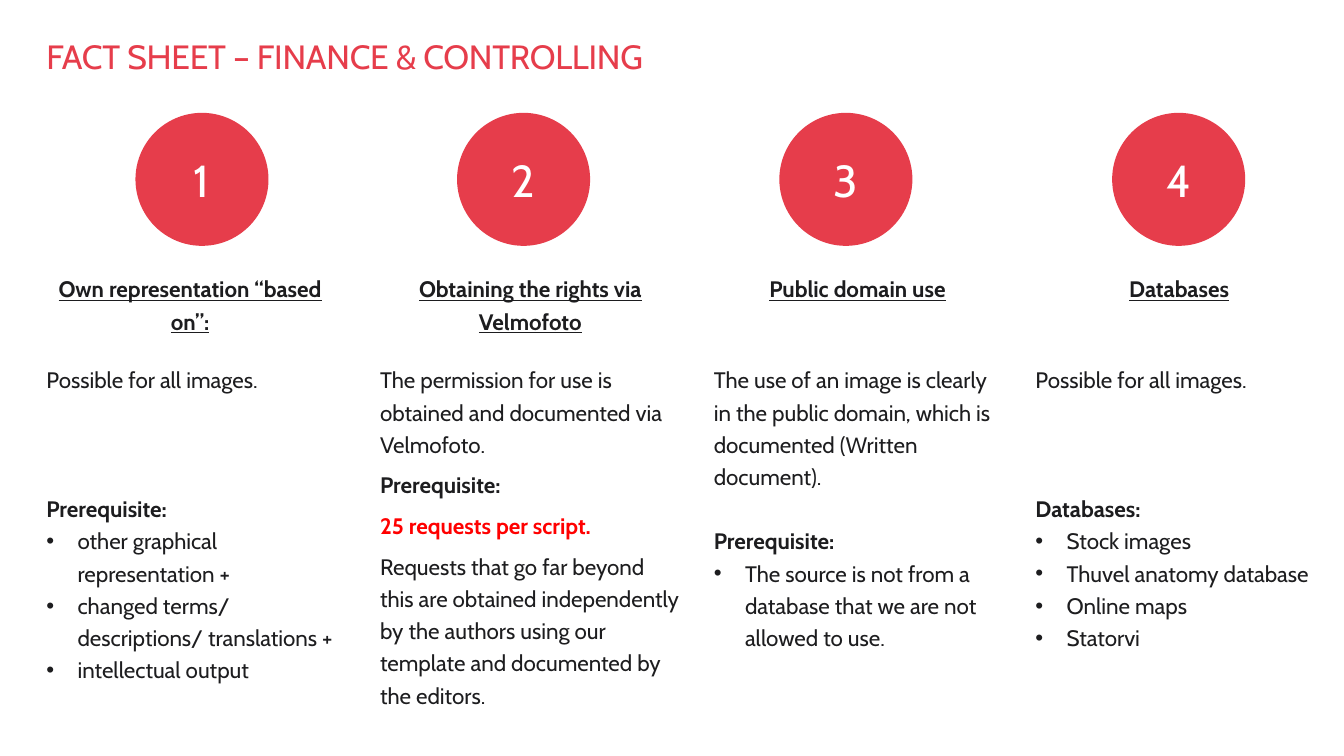
from dataclasses import dataclass

from lxml.etree import SubElement
from pptx import Presentation
from pptx.dml.color import RGBColor
from pptx.enum.shapes import MSO_SHAPE
from pptx.enum.text import MSO_ANCHOR, PP_ALIGN
from pptx.oxml.ns import qn
from pptx.util import Inches, Pt

CORAL = RGBColor(0xE6, 0x3D, 0x4B)
INK = RGBColor(0x1D, 0x1D, 0x1F)
ALERT = RGBColor(0xFF, 0x00, 0x00)
WHITE = RGBColor(0xFF, 0xFF, 0xFF)
FONT = "Cabin"
SLIDE_WIDTH, SLIDE_HEIGHT = Inches(13.33), Inches(7.5)
BULLET_INDENT = Inches(0.31)
BADGE_TOP, BADGE_SHARE = 14.93, 9.9
COLUMN_TOP = 35.73


@dataclass
class Line:
    text: str
    bold: bool = False
    bullet: bool = False
    before: float = 0
    after: float = 0
    color: RGBColor = INK


@dataclass
class Option:
    left: float
    width: float
    height: float
    badge_left: float
    heading: str
    lines: list


OPTIONS = [
    Option(3.45, 21.38, 64.27, 10.08, "Own representation “based on”:", [
        Line("Possible for all images.", before=19),
        Line("Prerequisite:", bold=True, before=69),
        Line("other graphical representation +", bullet=True),
        Line("changed terms/ descriptions/ translations +", bullet=True),
        Line("intellectual output", bullet=True),
    ]),
    Option(28.28, 22.36, 64.27, 34.01, "Obtaining the rights via Velmofoto", [
        Line("The permission for use is obtained and documented via Velmofoto.", before=19),
        Line("Prerequisite:", bold=True, before=6),
        Line("25 requests per script.", bold=True, before=6, after=6, color=ALERT),
        Line("Requests that go far beyond this are obtained independently by the authors "
             "using our template and documented by the editors."),
    ]),
    Option(53.11, 21.38, 55.73, 57.99, "Public domain use", [
        Line("The use of an image is clearly in the public domain, which is documented "
             "(Written document).", before=42),
        Line("Prerequisite:", bold=True, before=23),
        Line("The source is not from a database that we are not allowed to use.", bullet=True),
    ]),
    Option(77.04, 21.38, 55.73, 82.75, "Databases", [
        Line("Possible for all images.", before=42),
        Line("Databases:", bold=True, before=69),
        Line("Stock images", bullet=True),
        Line("Thuvel anatomy database", bullet=True),
        Line("Online maps", bullet=True),
        Line("Statorvi", bullet=True),
    ]),
]


def across(percent):
    return round(SLIDE_WIDTH * percent / 100)


def down(percent):
    return round(SLIDE_HEIGHT * percent / 100)


def style(paragraph, size, color, bold=False, underline=False):
    for run in paragraph.runs:
        run.font.name = FONT
        run.font.size = Pt(size)
        run.font.color.rgb = color
        run.font.bold = bold
        run.font.underline = underline


def add_text_frame(slide, left, top, width, height):
    frame = slide.shapes.add_textbox(left, top, width, height).text_frame
    frame.word_wrap = True
    frame.margin_left = frame.margin_right = frame.margin_top = frame.margin_bottom = 0
    return frame


def add_bullet(paragraph):
    properties = paragraph._p.get_or_add_pPr()
    properties.set("marL", str(BULLET_INDENT))
    properties.set("indent", str(-BULLET_INDENT))
    SubElement(properties, qn("a:buFont")).set("typeface", "Arial")
    SubElement(properties, qn("a:buChar")).set("char", "•")


def add_title(slide, left, top, width, height):
    frame = add_text_frame(slide, left, top, width, height)
    frame.vertical_anchor = MSO_ANCHOR.MIDDLE
    frame.text = "FACT SHEET – FINANCE & CONTROLLING"
    title = frame.paragraphs[0]
    title.line_spacing = 0.9
    style(title, 24, CORAL)
    title.runs[0]._r.get_or_add_rPr().set("spc", "-20")


def add_badge(slide, number, left, top, diameter):
    badge = slide.shapes.add_shape(MSO_SHAPE.OVAL, left, top, diameter, diameter)
    badge.shadow.inherit = False
    badge.fill.solid()
    badge.fill.fore_color.rgb = CORAL
    badge.line.fill.background()
    frame = badge.text_frame
    frame.vertical_anchor = MSO_ANCHOR.MIDDLE
    frame.text = str(number)
    frame.paragraphs[0].alignment = PP_ALIGN.CENTER
    style(frame.paragraphs[0], 32, WHITE)


def add_column(slide, option, left, top, width, height):
    frame = add_text_frame(slide, left, top, width, height)
    frame.text = option.heading
    heading = frame.paragraphs[0]
    heading.alignment = PP_ALIGN.CENTER
    heading.line_spacing = 1.2
    style(heading, 16, INK, bold=True, underline=True)
    for line in option.lines:
        paragraph = frame.add_paragraph()
        paragraph.text = line.text
        paragraph.alignment = PP_ALIGN.LEFT
        paragraph.line_spacing = 1.2
        paragraph.space_before = Pt(line.before)
        paragraph.space_after = Pt(line.after)
        style(paragraph, 16, line.color, bold=line.bold)
        if line.bullet:
            add_bullet(paragraph)


def build_fact_sheet(presentation):
    slide = presentation.slides.add_slide(presentation.slide_layouts[6])
    add_title(slide, across(3.45), down(5.0), across(93.1), down(5.6))
    for number, option in enumerate(OPTIONS, start=1):
        add_badge(slide, number, across(option.badge_left), down(BADGE_TOP), across(BADGE_SHARE))
        add_column(slide, option, across(option.left), down(COLUMN_TOP),
                   across(option.width), down(option.height))


def main():
    presentation = Presentation()
    presentation.slide_width = SLIDE_WIDTH
    presentation.slide_height = SLIDE_HEIGHT
    build_fact_sheet(presentation)
    presentation.save("out.pptx")


if __name__ == "__main__":
    main()
